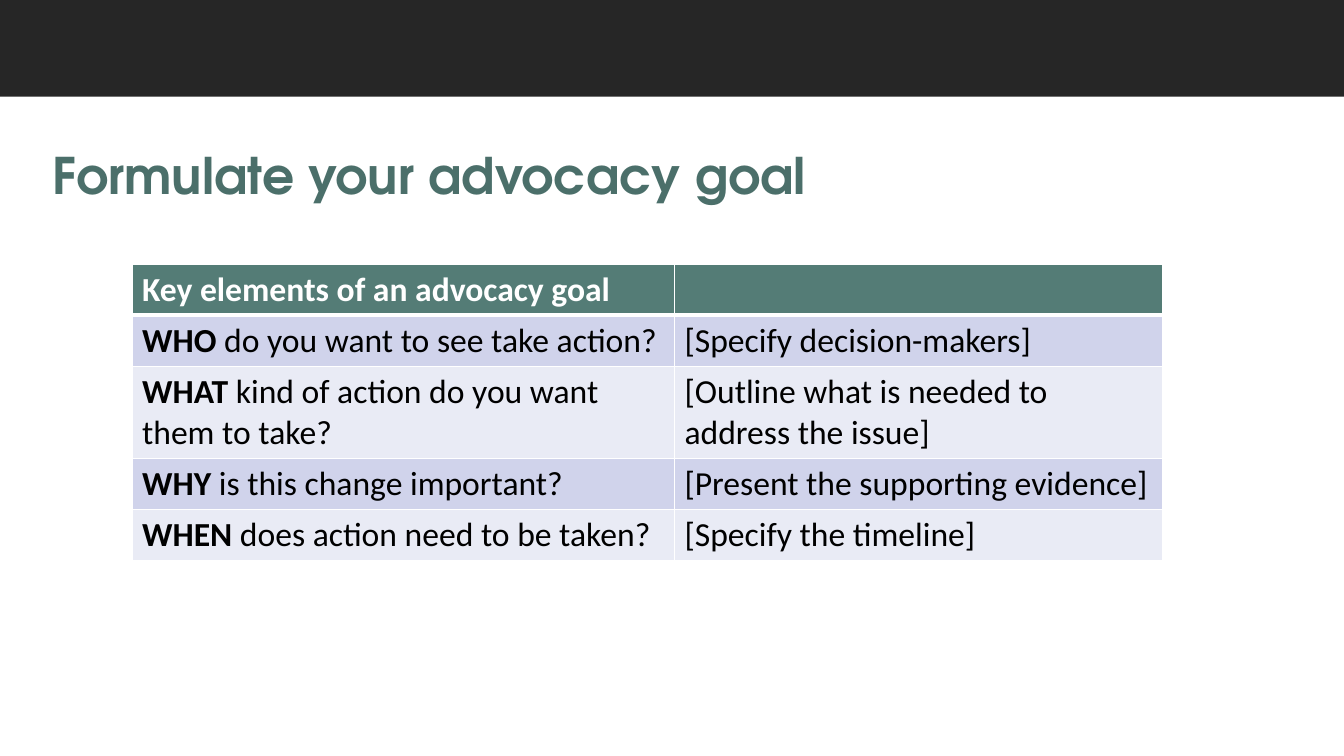
from dataclasses import dataclass

from lxml import etree
from pptx import Presentation
from pptx.dml.color import RGBColor
from pptx.enum.shapes import MSO_SHAPE
from pptx.enum.text import MSO_ANCHOR, MSO_AUTO_SIZE, PP_ALIGN
from pptx.oxml.ns import qn
from pptx.util import Inches, Pt

RECTANGLE = MSO_SHAPE.RECTANGLE
MIDDLE = MSO_ANCHOR.MIDDLE
NO_AUTOFIT = MSO_AUTO_SIZE.NONE
LEFT = PP_ALIGN.LEFT
TITLE_ONLY_LAYOUT = 5


@dataclass(frozen=True)
class Theme:
    """Colours, fonts and type sizes of the slide."""
    top_band: str = "262626"
    title: str = "4B6F6A"
    header: str = "547C76"
    row_bands: tuple = ("D0D3EB", "E9EBF5")
    white: str = "FFFFFF"
    body: str = "000000"
    title_font: str = "TeX Gyre Adventor"
    body_font: str = "Calibri"
    title_size: int = 36
    body_size: int = 24
    border_width: int = 1
    header_border_width: int = 3


THEME = Theme()
HEADING = "Key elements of an advocacy goal"
GOAL_ROWS = (
    ("WHO", " do you want to see take action?", "[Specify decision-makers]"),
    ("WHAT", " kind of action do you want them to take?",
     "[Outline what is needed to address the issue]"),
    ("WHY", " is this change important?", "[Present the supporting evidence]"),
    ("WHEN", " does action need to be taken?", "[Specify the timeline]"),
)
COLUMN_WIDTHS = (5.38, 4.84)
ROW_HEIGHTS = (0.5, 0.5, 0.91, 0.5, 0.5)


def add_text(paragraph, text, *, color=THEME.body, bold=False,
             font=THEME.body_font, size=THEME.body_size):
    """Append a formatted run to a paragraph."""
    run = paragraph.add_run()
    run.text = text
    run.font.name = font
    run.font.size = Pt(size)
    run.font.bold = bold
    run.font.color.rgb = RGBColor.from_string(color)


def add_top_band(slide, width):
    """Draw the dark band across the top of the slide."""
    shape = slide.shapes.add_shape(RECTANGLE, 0, 0, width, Inches(0.96))
    shape.shadow.inherit = False
    shape.fill.solid()
    shape.fill.fore_color.rgb = RGBColor.from_string(THEME.top_band)
    shape.line.fill.background()


def set_title(slide, text):
    """Place and format the title placeholder."""
    title = slide.shapes.title
    title.left, title.top = Inches(0.42), Inches(0.58)
    title.width, title.height = Inches(12.5), Inches(2.37)
    frame = title.text_frame
    frame.word_wrap = True
    frame.auto_size = NO_AUTOFIT
    frame.vertical_anchor = MIDDLE
    paragraph = frame.paragraphs[0]
    paragraph.alignment = LEFT
    paragraph.line_spacing = 0.9
    add_text(paragraph, text, color=THEME.title, bold=True,
             font=THEME.title_font, size=THEME.title_size)


def style_cell(cell, fill, top_width, bottom_width):
    """Give a table cell its fill and white borders."""
    cell.fill.solid()
    cell.fill.fore_color.rgb = RGBColor.from_string(fill)
    properties = cell._tc.get_or_add_tcPr()
    side_width = THEME.border_width
    borders = (("a:lnL", side_width), ("a:lnR", side_width),
               ("a:lnT", top_width), ("a:lnB", bottom_width))
    for index, (side, width) in enumerate(borders):
        line = etree.Element(qn(side), w=str(Pt(width)))
        line_fill = etree.SubElement(line, qn("a:solidFill"))
        etree.SubElement(line_fill, qn("a:srgbClr"), val=THEME.white)
        properties.insert(index, line)


def add_goal_table(slide):
    """Build the table of advocacy goal elements."""
    frame = slide.shapes.add_table(
        len(ROW_HEIGHTS), len(COLUMN_WIDTHS), Inches(1.31), Inches(2.62),
        Inches(sum(COLUMN_WIDTHS)), Inches(sum(ROW_HEIGHTS)))
    table = frame.table
    for column, width in zip(table.columns, COLUMN_WIDTHS):
        column.width = Inches(width)
    for index, (row, height) in enumerate(zip(table.rows, ROW_HEIGHTS)):
        row.height = Inches(height)
        fill = THEME.row_bands[(index - 1) % 2] if index else THEME.header
        thick, thin = THEME.header_border_width, THEME.border_width
        for cell in row.cells:
            style_cell(cell, fill, thick if index == 1 else thin,
                       thick if index == 0 else thin)
    add_text(table.cell(0, 0).text_frame.paragraphs[0], HEADING,
             color=THEME.white, bold=True)
    for index, (keyword, question, answer) in enumerate(GOAL_ROWS, start=1):
        paragraph = table.cell(index, 0).text_frame.paragraphs[0]
        add_text(paragraph, keyword, bold=True)
        add_text(paragraph, question)
        add_text(table.cell(index, 1).text_frame.paragraphs[0], answer)


def main():
    """Build and save the presentation."""
    presentation = Presentation()
    presentation.slide_width = Inches(13.33)
    presentation.slide_height = Inches(7.5)
    layout = presentation.slide_layouts[TITLE_ONLY_LAYOUT]
    slide = presentation.slides.add_slide(layout)
    add_top_band(slide, presentation.slide_width)
    set_title(slide, "Formulate your advocacy goal")
    add_goal_table(slide)
    presentation.save("out.pptx")


if __name__ == "__main__":
    main()
